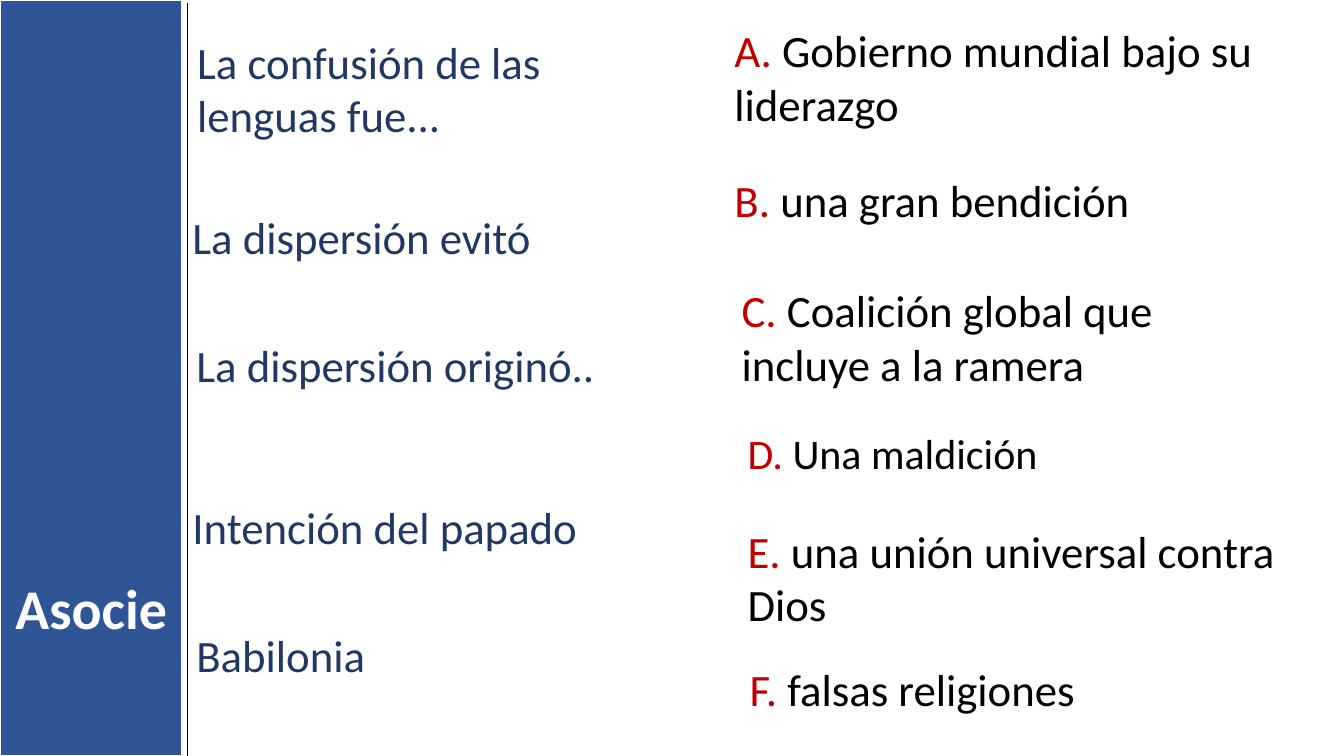
from dataclasses import dataclass

from lxml.etree import SubElement
from pptx import Presentation
from pptx.dml.color import RGBColor
from pptx.enum.shapes import MSO_CONNECTOR, MSO_SHAPE
from pptx.enum.text import MSO_ANCHOR, MSO_AUTO_SIZE, PP_ALIGN
from pptx.oxml.ns import qn
from pptx.slide import Slide
from pptx.text.text import _Run
from pptx.util import Cm, Pt

SLIDE_WIDTH, SLIDE_HEIGHT = 33.87, 19.05
BAND_WIDTH = 4.6
RULE_X = 4.72
FONT = "Calibri"
BLUE, NAVY, RED, BLACK, WHITE = "2F5597", "203864", "C00000", "000000", "FFFFFF"


@dataclass
class Entry:
    text: str
    left: float
    top: float
    width: float
    height: float = 1.63
    letter: str = ""
    size: int = 32


PROMPTS = [
    Entry("La confusión de las lenguas fue...", 4.72, 0.74, 12.42, 3),
    Entry("La dispersión evitó", 4.6, 5.16, 13.11),
    Entry("La dispersión originó..", 4.7, 8.38, 11.33),
    Entry("Intención del papado", 4.6, 12.47, 12.55),
    Entry("Babilonia", 4.7, 15.7, 11.33),
]

ANSWERS = [
    Entry("Gobierno mundial bajo su liderazgo", 18.26, 0.46, 15.14, 3, "A"),
    Entry("una gran bendición", 18.26, 4.22, 15.14, letter="B"),
    Entry("Coalición global que incluye a la ramera", 18.44, 7.01, 14.22, 3, "C"),
    Entry("Una maldición", 18.59, 10.64, 13.28, 1.55, "D", 30),
    Entry("una unión universal contra Dios", 18.59, 13.06, 14.05, 3, "E"),
    Entry("falsas religiones", 18.64, 16.54, 14.4, letter="F"),
]


def rgb(color: str) -> RGBColor:
    return RGBColor.from_string(color)


def format_run(run: _Run, size: int, color: str, bold: bool = False) -> None:
    run.font.name = FONT
    run.font.size = Pt(size)
    run.font.bold = bold
    run.font.color.rgb = rgb(color)


def add_band(slide: Slide) -> None:
    band = slide.shapes.add_shape(
        MSO_SHAPE.RECTANGLE, 0, 0, Cm(BAND_WIDTH), Cm(SLIDE_HEIGHT))
    band.shadow.inherit = False
    band.fill.solid()
    band.fill.fore_color.rgb = rgb(BLUE)
    band.line.color.rgb = rgb(WHITE)
    band.line.width = Pt(1.5)


def add_rule(slide: Slide) -> None:
    rule = slide.shapes.add_connector(
        MSO_CONNECTOR.STRAIGHT, Cm(RULE_X), Cm(0.08), Cm(RULE_X), Cm(SLIDE_HEIGHT))
    rule.line.color.rgb = rgb(BLACK)
    rule.line.width = Pt(1)
    SubElement(rule._element.spPr, qn("a:effectLst"))


def add_entry(slide: Slide, entry: Entry, color: str) -> None:
    box = slide.shapes.add_textbox(
        Cm(entry.left), Cm(entry.top), Cm(entry.width), Cm(entry.height))
    frame = box.text_frame
    frame.word_wrap = True
    frame.auto_size = MSO_AUTO_SIZE.SHAPE_TO_FIT_TEXT
    paragraph = frame.paragraphs[0]
    if entry.letter:
        paragraph.text = f"{entry.letter}. "
        format_run(paragraph.runs[0], entry.size, RED)
    run = paragraph.add_run()
    run.text = entry.text
    format_run(run, entry.size, color)


def place_title(slide: Slide) -> None:
    title = slide.shapes.title
    title.left, title.top = Cm(0), Cm(14.33)
    title.width, title.height = Cm(BAND_WIDTH), Cm(1.96)
    frame = title.text_frame
    frame.text = "Asocie"
    frame.word_wrap = True
    frame.auto_size = MSO_AUTO_SIZE.NONE
    frame.vertical_anchor = MSO_ANCHOR.TOP
    paragraph = frame.paragraphs[0]
    paragraph.alignment = PP_ALIGN.CENTER
    format_run(paragraph.runs[0], 40, WHITE, bold=True)
    # Bring the title in front of the band
    slide.shapes._spTree.append(title._element)


def main() -> None:
    presentation = Presentation()
    presentation.slide_width = Cm(SLIDE_WIDTH)
    presentation.slide_height = Cm(SLIDE_HEIGHT)
    slide = presentation.slides.add_slide(presentation.slide_layouts[5])

    # Side band with the title
    add_band(slide)
    place_title(slide)

    # Two columns to be matched
    for prompt in PROMPTS:
        add_entry(slide, prompt, NAVY)
    for answer in ANSWERS:
        add_entry(slide, answer, BLACK)

    # Vertical rule beside the band
    add_rule(slide)
    presentation.save("out.pptx")


if __name__ == "__main__":
    main()
